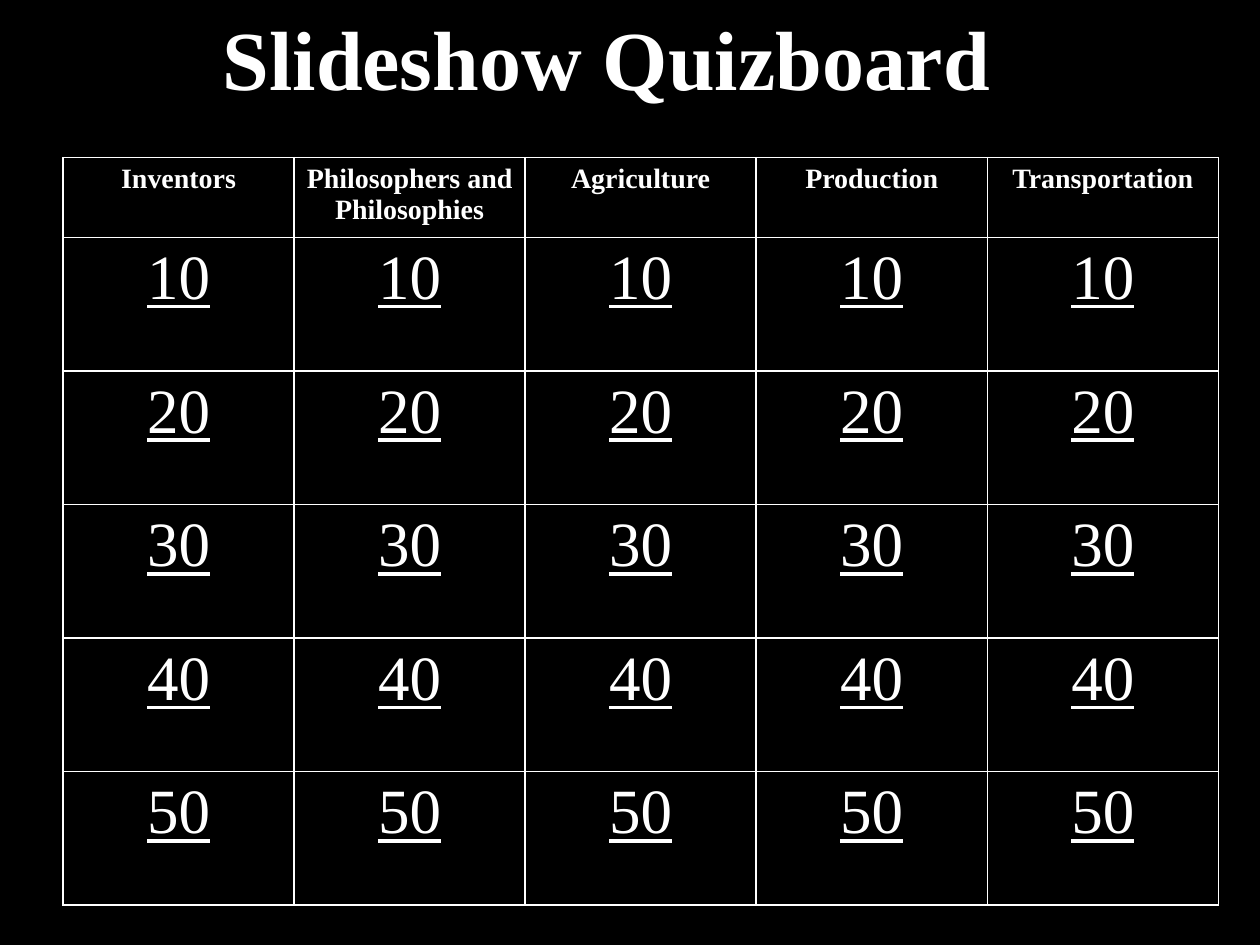
from lxml import etree
from pptx import Presentation
from pptx import util as u
from pptx.dml.color import RGBColor
from pptx.enum import text
from pptx.oxml import ns

BLACK = RGBColor(0, 0, 0)
WHITE = RGBColor(255, 255, 255)
FACE = "Times New Roman"
TOPICS = ["Inventors", "Philosophers and Philosophies", "Agriculture",
          "Production", "Transportation"]
POINTS = [10, 20, 30, 40, 50]


def style(para, size, bold, under=False):
    for run in para.runs:
        font = run.font
        font.name = FACE
        font.size = u.Pt(size)
        font.bold = bold
        font.underline = under
        font.color.rgb = WHITE


def border(cell):
    props = cell._tc.get_or_add_tcPr()
    for at, side in enumerate(["lnL", "lnR", "lnT", "lnB"]):
        line = etree.Element(ns.qn("a:" + side), w=str(u.Pt(1)))
        fill = etree.SubElement(line, ns.qn("a:solidFill"))
        etree.SubElement(fill, ns.qn("a:srgbClr"), val=str(WHITE))
        props.insert(at, line)


deck = Presentation()
deck.slide_width = u.Inches(10)
deck.slide_height = u.Inches(7.5)
slide = deck.slides.add_slide(deck.slide_layouts[6])
slide.background.fill.solid()
slide.background.fill.fore_color.rgb = BLACK

title = slide.shapes.add_textbox(
    u.Inches(1.67), 0, u.Inches(6.5), u.Inches(0.9))
frame = title.text_frame
frame.word_wrap = True
frame.auto_size = text.MSO_AUTO_SIZE.SHAPE_TO_FIT_TEXT
frame.text = "Slideshow Quizboard"
style(frame.paragraphs[0], 48, True)

rows = [TOPICS] + [[str(point)] * len(TOPICS) for point in POINTS]
board = slide.shapes.add_table(
    len(rows), len(TOPICS), u.Inches(0.5), u.Inches(1.25),
    u.Inches(9.17), u.Inches(5.93)).table
board.first_row = False
board.horz_banding = False
for col in board.columns:
    col.width = u.Inches(9.17 / len(TOPICS))

for r, words in enumerate(rows):
    head = r == 0
    board.rows[r].height = u.Inches(0.63 if head else 1.06)
    for c, word in enumerate(words):
        cell = board.cell(r, c)
        cell.fill.background()
        border(cell)
        cell.text_frame.text = word
        para = cell.text_frame.paragraphs[0]
        para.alignment = text.PP_ALIGN.CENTER
        style(para, 16 if head else 36, head, not head)

deck.save("out.pptx")
